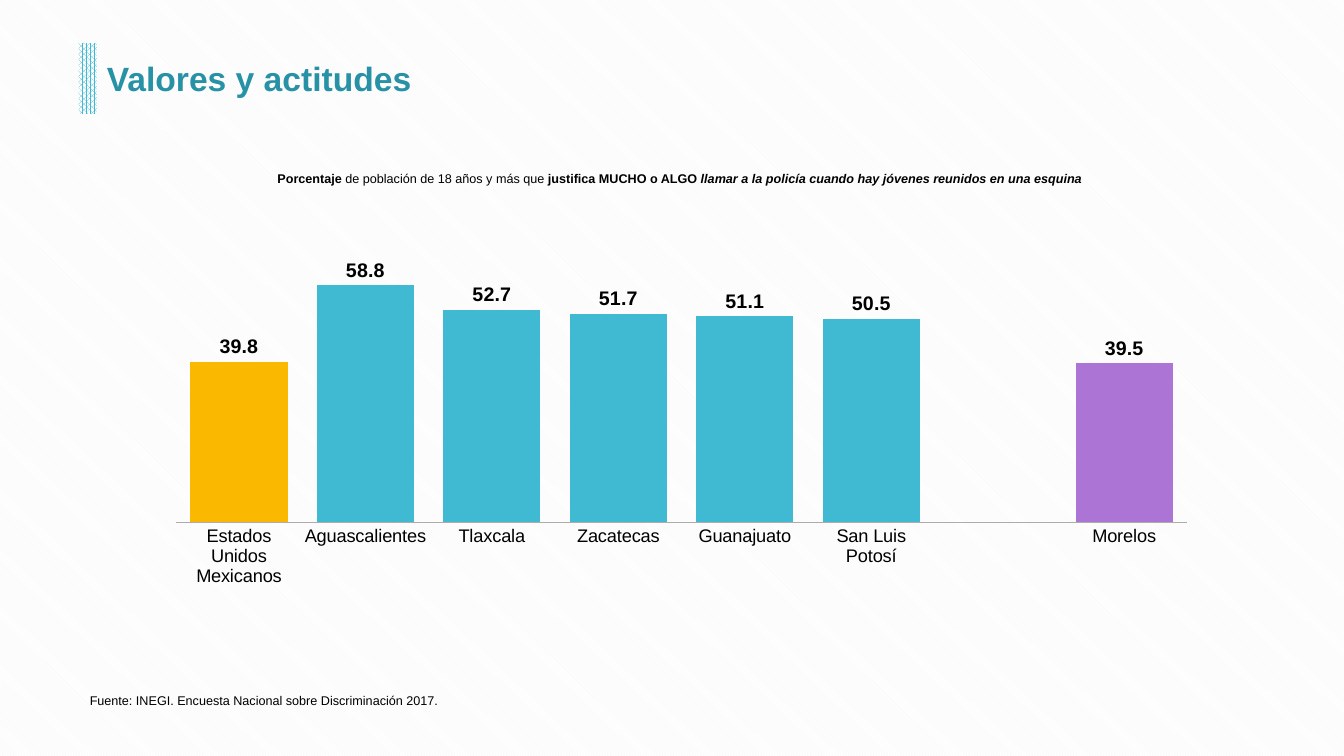
"""Build the slide on values and attitudes with a column chart by state."""
import pptx
import pptx.chart.data
import pptx.dml.color
import pptx.enum.chart
import pptx.enum.dml
import pptx.enum.shapes
import pptx.enum.text
import pptx.oxml
import pptx.oxml.ns
import pptx.util
from dataclasses import dataclass

TITLE = "Valores y actitudes"
SOURCE = "Fuente: INEGI. Encuesta Nacional sobre Discriminación 2017."
QUESTION = [
    ("Porcentaje ", True, False),
    ("de población de 18 años y más que ", False, False),
    ("justifica MUCHO o ALGO ", True, False),
    ("llamar a la policía cuando hay jóvenes reunidos en una esquina", True, True),
]
STATES = [
    ("Estados\nUnidos\nMexicanos", 39.8),
    ("Aguascalientes", 58.8),
    ("Tlaxcala", 52.7),
    ("Zacatecas", 51.7),
    ("Guanajuato", 51.1),
    ("San Luis\nPotosí", 50.5),
    ("", None),
    ("Morelos", 39.5),
]
WIDTH, HEIGHT = 13.33, 7.5
BOXES = {
    "bar": (0.78, 0.43, 0.18, 0.7),
    "title": (0.96, 0.36, 11.61, 0.83),
    "source": (0.79, 6.3, 7.85, 0.77),
    "question": (0.99, 1.19, 11.5, 0.71),
    "chart": (1.64, 2.15, 10.24, 3.89),
}
PLOT = {"x": 0.01, "y": 0.06, "w": 0.98, "h": 0.72}


@dataclass(frozen=True)
class Theme:
    font: str = "Arial"
    title: str = "2791A6"
    text: str = "000000"
    paper: str = "FFFFFF"
    stripe: str = "F2F2F2"
    state: str = "40BAD2"
    country: str = "FAB900"
    focus: str = "AB74D5"
    axis: str = "AFABAB"
    title_size: int = 24
    note_size: int = 9
    value_size: int = 14
    state_size: int = 13


THEME = Theme()


def rgb(value):
    return pptx.dml.color.RGBColor.from_string(value)


def box(name):
    return [pptx.util.Inches(v) for v in BOXES[name]]


def style(font, size, color=THEME.text, bold=False, italic=False):
    font.name, font.size = THEME.font, pptx.util.Pt(size)
    font.bold, font.italic = bold, italic
    font.color.rgb = rgb(color)


def pattern(fill, kind, color):
    fill.patterned()
    fill.pattern = kind
    fill.fore_color.rgb, fill.back_color.rgb = rgb(color), rgb(THEME.paper)


def place(sp, name, anchor):
    sp.left, sp.top, sp.width, sp.height = box(name)
    tf = sp.text_frame
    tf.word_wrap, tf.vertical_anchor = True, anchor
    tf.auto_size = pptx.enum.text.MSO_AUTO_SIZE.NONE
    p = tf.paragraphs[0]
    p.space_before = pptx.util.Pt(0)
    p.alignment = pptx.enum.text.PP_ALIGN.LEFT
    return p


def add_texts(s):
    anchor = pptx.enum.text.MSO_ANCHOR
    holders = {sp.placeholder_format.idx: sp for sp in s.placeholders}
    for idx in (2, 4):
        element = holders[idx].element
        element.getparent().remove(element)
    p = place(holders[0], "title", anchor.MIDDLE)
    p.text = TITLE
    style(p.runs[0].font, THEME.title_size, THEME.title, bold=True)
    p = place(holders[1], "source", anchor.BOTTOM)
    p.text = SOURCE
    style(p.runs[0].font, THEME.note_size)
    p = place(holders[3], "question", anchor.BOTTOM)
    p.alignment = pptx.enum.text.PP_ALIGN.CENTER
    for text, bold, italic in QUESTION:
        r = p.add_run()
        r.text = text
        style(r.font, THEME.note_size, bold=bold, italic=italic)


def set_plot_area(chart):
    area = chart.element.find(".//" + pptx.oxml.ns.qn("c:plotArea"))
    for old in area.findall(pptx.oxml.ns.qn("c:layout")):
        area.remove(old)
    modes = "".join(f'<c:{k}Mode val="edge"/>' for k in "xy")
    shares = "".join(f'<c:{k} val="{v}"/>' for k, v in PLOT.items())
    area.insert(0, pptx.oxml.parse_xml(
        f'<c:layout {pptx.oxml.ns.nsdecls("c")}><c:manualLayout>'
        f'<c:layoutTarget val="inner"/>{modes}{shares}</c:manualLayout></c:layout>'))


def add_state_chart(s):
    data = pptx.chart.data.CategoryChartData(number_format="0.0")
    data.categories = [state for state, _ in STATES]
    data.add_series("Series 1", [value for _, value in STATES])
    kinds = pptx.enum.chart
    chart = s.shapes.add_chart(kinds.XL_CHART_TYPE.COLUMN_CLUSTERED, *box("chart"), data).chart
    chart.has_title = chart.has_legend = False
    style(chart.font, THEME.value_size)
    set_plot_area(chart)

    axis = chart.category_axis
    axis.major_tick_mark = axis.minor_tick_mark = kinds.XL_TICK_MARK.NONE
    style(axis.tick_labels.font, THEME.state_size)
    axis.format.line.color.rgb = rgb(THEME.axis)
    axis.format.line.width = pptx.util.Pt(1)
    values = chart.value_axis
    values.minimum_scale, values.maximum_scale = 0, 70
    values.has_major_gridlines = values.visible = False

    plot = chart.plots[0]
    plot.gap_width, plot.vary_by_categories = 30, False
    series = plot.series[0]
    series.format.fill.solid()
    series.format.fill.fore_color.rgb = rgb(THEME.state)
    for i, color in ((0, THEME.country), (len(STATES) - 1, THEME.focus)):
        fill = series.points[i].format.fill
        fill.solid()
        fill.fore_color.rgb = rgb(color)
    labels = series.data_labels
    labels.show_value = True
    labels.number_format, labels.number_format_is_linked = "0.0", False
    labels.position = kinds.XL_LABEL_POSITION.OUTSIDE_END
    style(labels.font, THEME.value_size, bold=True)


def main():
    prs = pptx.Presentation()
    prs.slide_width, prs.slide_height = pptx.util.Inches(WIDTH), pptx.util.Inches(HEIGHT)
    s = prs.slides.add_slide(prs.slide_layouts.get_by_name("Comparison"))
    patterns = pptx.enum.dml.MSO_PATTERN
    pattern(s.background.fill, patterns.LIGHT_DOWNWARD_DIAGONAL, THEME.stripe)
    bar = s.shapes.add_shape(pptx.enum.shapes.MSO_SHAPE.RECTANGLE, *box("bar"))
    bar.shadow.inherit = False
    bar.line.fill.background()
    pattern(bar.fill, patterns.PERCENT_75, THEME.state)
    add_texts(s)
    add_state_chart(s)
    prs.save("out.pptx")


if __name__ == "__main__":
    main()
